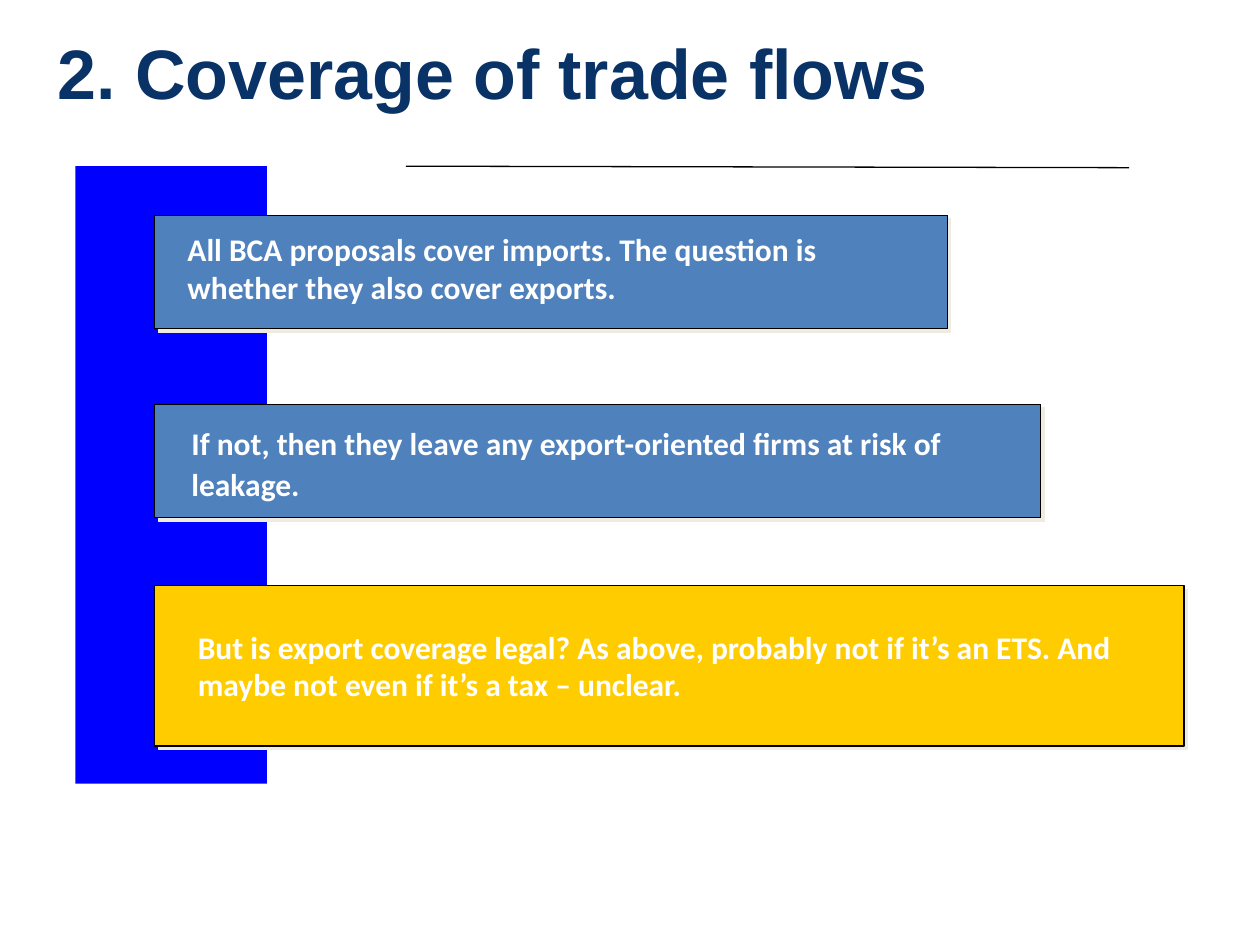
"""Build the slide on coverage of trade flows."""
from lxml.etree import SubElement
from pptx import Presentation
from pptx.dml.color import RGBColor
from pptx.enum.shapes import MSO_CONNECTOR, MSO_SHAPE
from pptx.enum.text import MSO_ANCHOR
from pptx.oxml.ns import qn
from pptx.util import Cm, Pt

NAVY = RGBColor(0x09, 0x32, 0x66)
BLUE = RGBColor(0x00, 0x00, 0xFF)
STEEL = RGBColor(0x4F, 0x81, 0xBD)
GOLD = RGBColor(0xFF, 0xCC, 0x00)
CREAM = RGBColor(0xEE, 0xEC, 0xE1)
BLACK = RGBColor(0x00, 0x00, 0x00)
WHITE = RGBColor(0xFF, 0xFF, 0xFF)


def add_rectangle(shapes, left, top, width, height, color):
    shape = shapes.add_shape(MSO_SHAPE.RECTANGLE, Cm(left), Cm(top), Cm(width), Cm(height))
    shape.shadow.inherit = False
    shape.fill.solid()
    shape.fill.fore_color.rgb = color
    shape.line.fill.background()
    return shape


def add_text(shapes, left, top, width, height, text, font_name, size, color):
    text_box = shapes.add_textbox(Cm(left), Cm(top), Cm(width), Cm(height))
    text_frame = text_box.text_frame
    text_frame.word_wrap = True
    text_frame.vertical_anchor = MSO_ANCHOR.MIDDLE
    text_frame.text = text
    font = text_frame.paragraphs[0].runs[0].font
    font.name, font.size, font.bold = font_name, Pt(size), True
    font.color.rgb = color
    return text_frame


presentation = Presentation()
presentation.slide_width, presentation.slide_height = Cm(25.4), Cm(19.05)
slide = presentation.slides.add_slide(presentation.slide_layouts[6])

add_text(slide.shapes, 0.91, 1.04, 23.95, 0.81, "2. Coverage of trade flows", "Arial", 40, NAVY)
add_rectangle(slide.shapes, 1.52, 3.35, 3.86, 12.45, BLUE)

rule = slide.shapes.add_connector(MSO_CONNECTOR.STRAIGHT, Cm(8.18), Cm(3.35), Cm(22.76), Cm(3.38))
rule.line.color.rgb = BLACK
rule.line.width = Pt(0.75)
SubElement(rule._element.spPr, qn("a:effectLst"))

banners = [
    ((4.34, 15.98, 2.29), STEEL, (3.78, 4.34, 14.63, 2.11),
     "All BCA proposals cover imports. The question is whether they also cover exports."),
    ((8.15, 17.86, 2.29), STEEL, (3.86, 8.26, 16.38, 2.11),
     "If not, then they leave any export-oriented firms at risk of leakage."),
    ((11.81, 20.75, 3.23), GOLD, (3.99, 11.94, 19.02, 2.95),
     "But is export coverage legal? As above, probably not if it’s an ETS. "
     "And maybe not even if it’s a tax – unclear."),
]
text_frames = []
for (top, width, height), color, text_area, text in banners:
    group = slide.shapes.add_group_shape()
    banner = add_rectangle(group.shapes, 3.12, top, width, height, color)
    banner.line.color.rgb = BLACK
    banner.line.width = Pt(0.75)
    effects = banner._element.spPr.find(qn("a:effectLst"))
    shadow = SubElement(effects, qn("a:outerShdw"), dist=str(Pt(2.8)), dir="2700000",
                        algn="ctr", rotWithShape="0")
    SubElement(shadow, qn("a:srgbClr"), val=str(CREAM))

    text_frame = add_text(group.shapes, *text_area, text, "Calibri", 18, WHITE)
    text_frame.margin_left = text_frame.margin_right = 0
    text_frame.margin_top = text_frame.margin_bottom = 0
    text_frames.append(text_frame)

leakage = text_frames[1].paragraphs[0]
leakage.line_spacing = 1.07
leakage.space_after = Pt(8)

presentation.save("out.pptx")
